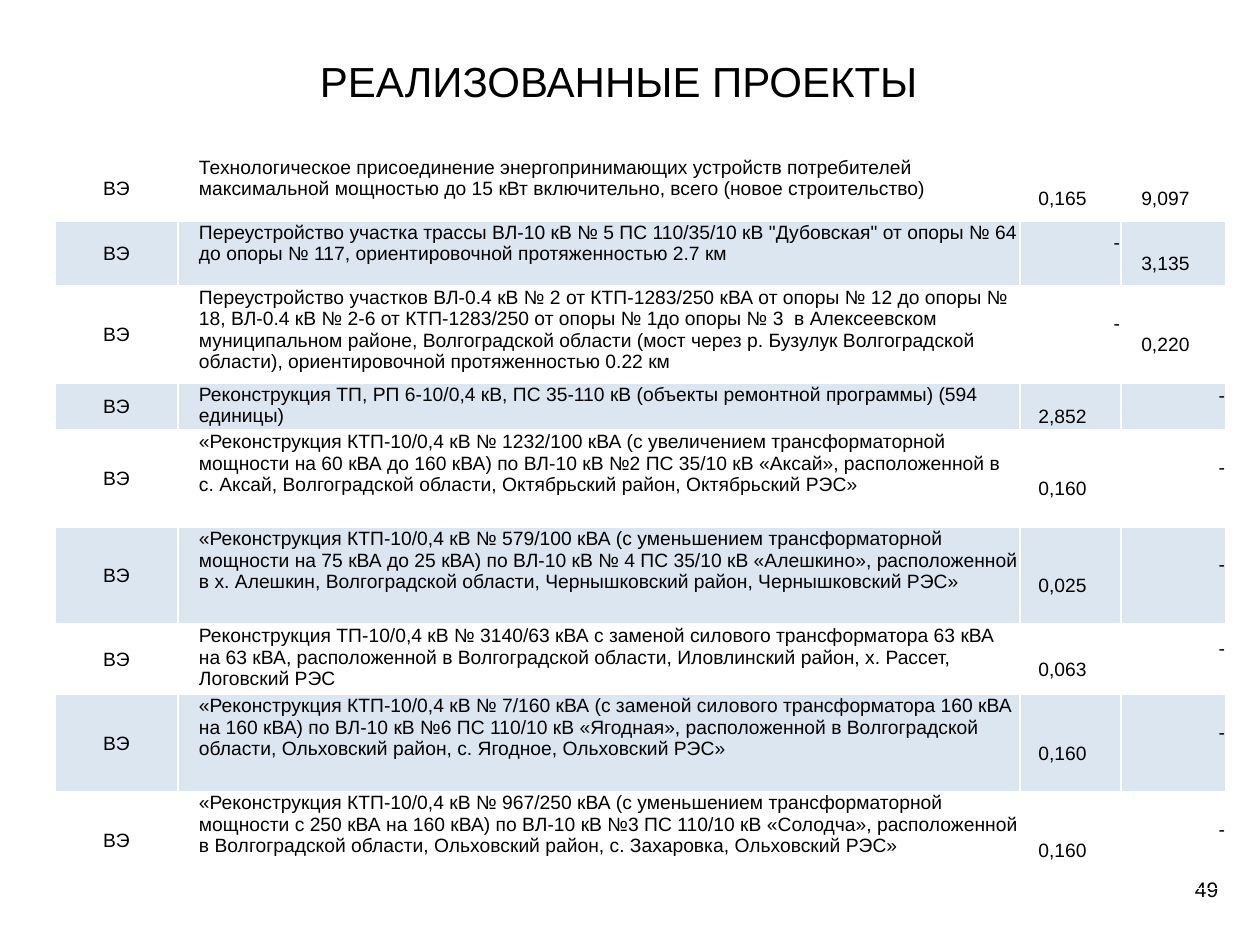
from lxml.etree import SubElement
from pptx import Presentation
from pptx.dml.color import RGBColor
from pptx.enum.text import MSO_ANCHOR as Anchor, PP_ALIGN as Align
from pptx.oxml.ns import qn
from pptx.util import Emu, Pt

EMU_PER_PX = 914400 / 126
COLORS = {"text": "000000", "band": "DCE6F1", "border": "FFFFFF"}
COLUMN_WIDTHS = [123, 842, 101, 105]
BRANCH = "ВЭ"
NONE = "-"

# Row height, project, capacity, length
PROJECTS = [
    (65, "Технологическое присоединение энергопринимающих устройств потребителей "
         "максимальной мощностью до 15 кВт включительно, всего (новое строительство)",
     "0,165", "9,097"),
    (65, "Переустройство участка трассы ВЛ-10 кВ № 5 ПС 110/35/10 кВ \"Дубовская\" "
         "от опоры № 64 до опоры № 117, ориентировочной протяженностью 2.7 км",
     NONE, "3,135"),
    (97, "Переустройство участков ВЛ-0.4 кВ № 2 от КТП-1283/250 кВА от опоры № 12 "
         "до опоры № 18, ВЛ-0.4 кВ № 2-6 от КТП-1283/250 от опоры № 1до опоры № 3  "
         "в Алексеевском муниципальном районе, Волгоградской области (мост через "
         "р. Бузулук Волгоградской области), ориентировочной протяженностью 0.22 км",
     NONE, "0,220"),
    (33, "Реконструкция ТП, РП 6-10/0,4 кВ, ПС 35-110 кВ (объекты ремонтной "
         "программы) (594 единицы)",
     "2,852", NONE),
    (97, "«Реконструкция КТП-10/0,4 кВ № 1232/100 кВА (с увеличением трансформаторной "
         "мощности на 60 кВА до 160 кВА) по ВЛ-10 кВ №2 ПС 35/10 кВ «Аксай», "
         "расположенной в с. Аксай, Волгоградской области, Октябрьский район, "
         "Октябрьский РЭС»",
     "0,160", NONE),
    (97, "«Реконструкция КТП-10/0,4 кВ № 579/100 кВА (с уменьшением трансформаторной "
         "мощности на 75 кВА до 25 кВА) по ВЛ-10 кВ № 4 ПС 35/10 кВ «Алешкино», "
         "расположенной в х. Алешкин, Волгоградской области, Чернышковский район, "
         "Чернышковский РЭС»",
     "0,025", NONE),
    (65, "Реконструкция ТП-10/0,4 кВ № 3140/63 кВА с заменой силового трансформатора "
         "63 кВА на 63 кВА, расположенной в Волгоградской области, Иловлинский район, "
         "х. Рассет, Логовский РЭС",
     "0,063", NONE),
    (97, "«Реконструкция КТП-10/0,4 кВ № 7/160 кВА (с заменой силового трансформатора "
         "160 кВА на 160 кВА) по ВЛ-10 кВ №6 ПС 110/10 кВ «Ягодная», расположенной "
         "в Волгоградской области, Ольховский район, с. Ягодное, Ольховский РЭС»",
     "0,160", NONE),
    (97, "«Реконструкция КТП-10/0,4 кВ № 967/250 кВА (с уменьшением трансформаторной "
         "мощности с 250 кВА на 160 кВА) по ВЛ-10 кВ №3 ПС 110/10 кВ «Солодча», "
         "расположенной в Волгоградской области, Ольховский район, с. Захаровка, "
         "Ольховский РЭС»",
     "0,160", NONE),
]


def px(length):
    return Emu(round(length * EMU_PER_PX))


class SlideBuilder:
    def __init__(self, slide, font="Arial"):
        self.slide = slide
        self.font = font

    def add_span(self, frame, text, size, align):
        para = frame.paragraphs[0]
        para.alignment = align
        span = para.add_run()
        span.text = text
        span.font.name = self.font
        span.font.size = Pt(size)
        span.font.color.rgb = RGBColor.from_string(COLORS["text"])

    def text(self, left, top, width, height, text, size, wrap=True):
        box = self.slide.shapes.add_textbox(px(left), px(top), px(width), px(height))
        frame = box.text_frame
        frame.word_wrap = wrap
        frame.margin_left = frame.margin_right = px(6)
        frame.margin_top = frame.margin_bottom = px(6)
        self.add_span(frame, text, size, Align.LEFT)

    def border(self, cell):
        properties = cell._tc.get_or_add_tcPr()
        for side in ("a:lnL", "a:lnR", "a:lnT", "a:lnB"):
            line = SubElement(properties, qn(side), w=str(Pt(1)))
            fill = SubElement(line, qn("a:solidFill"))
            SubElement(fill, qn("a:srgbClr"), val=COLORS["border"])

    def cell(self, cell, text, banded, align=Align.CENTER, anchor=Anchor.MIDDLE,
             margins=(1, 1, 1, 0)):
        """Fill one table cell; margins are left, top, right, bottom."""
        self.border(cell)
        if banded:
            cell.fill.solid()
            cell.fill.fore_color.rgb = RGBColor.from_string(COLORS["band"])
        else:
            cell.fill.background()
        cell.vertical_anchor = anchor
        (cell.margin_left, cell.margin_top,
         cell.margin_right, cell.margin_bottom) = map(px, margins)
        self.add_span(cell.text_frame, text, 11, align)

    def value(self, cell, text, banded):
        """Numbers sit just below the row's middle, dashes just above it at the right."""
        if text == NONE:
            self.cell(cell, text, banded, align=Align.RIGHT, margins=(1, 0, 1, 21))
        else:
            self.cell(cell, text, banded, margins=(1, 21, 17, 0))

    def projects(self, left, top):
        heights = [project[0] for project in PROJECTS]
        table = self.slide.shapes.add_table(
            len(PROJECTS), len(COLUMN_WIDTHS), px(left), px(top),
            px(sum(COLUMN_WIDTHS)), px(sum(heights))).table
        table.first_row = table.horz_banding = False
        for column, width in zip(table.columns, COLUMN_WIDTHS):
            column.width = px(width)
        for index, (height, project, capacity, length) in enumerate(PROJECTS):
            row = table.rows[index]
            row.height = px(height)
            banded = index % 2 == 1
            branch_cell, project_cell, capacity_cell, length_cell = row.cells
            self.cell(branch_cell, BRANCH, banded)
            self.cell(project_cell, project, banded, Align.LEFT, Anchor.TOP, (21, 1, 1, 0))
            self.value(capacity_cell, capacity, banded)
            self.value(length_cell, length, banded)


def main():
    deck = Presentation()
    deck.slide_width, deck.slide_height = px(1260), px(945)
    page = SlideBuilder(deck.slides.add_slide(deck.slide_layouts[6]))
    page.text(1189, 871, 37, 38, "49", 12, wrap=False)
    page.text(314, 50, 759, 48, "РЕАЛИЗОВАННЫЕ ПРОЕКТЫ", 24)
    page.projects(55, 156)
    deck.save("out.pptx")


if __name__ == "__main__":
    main()
